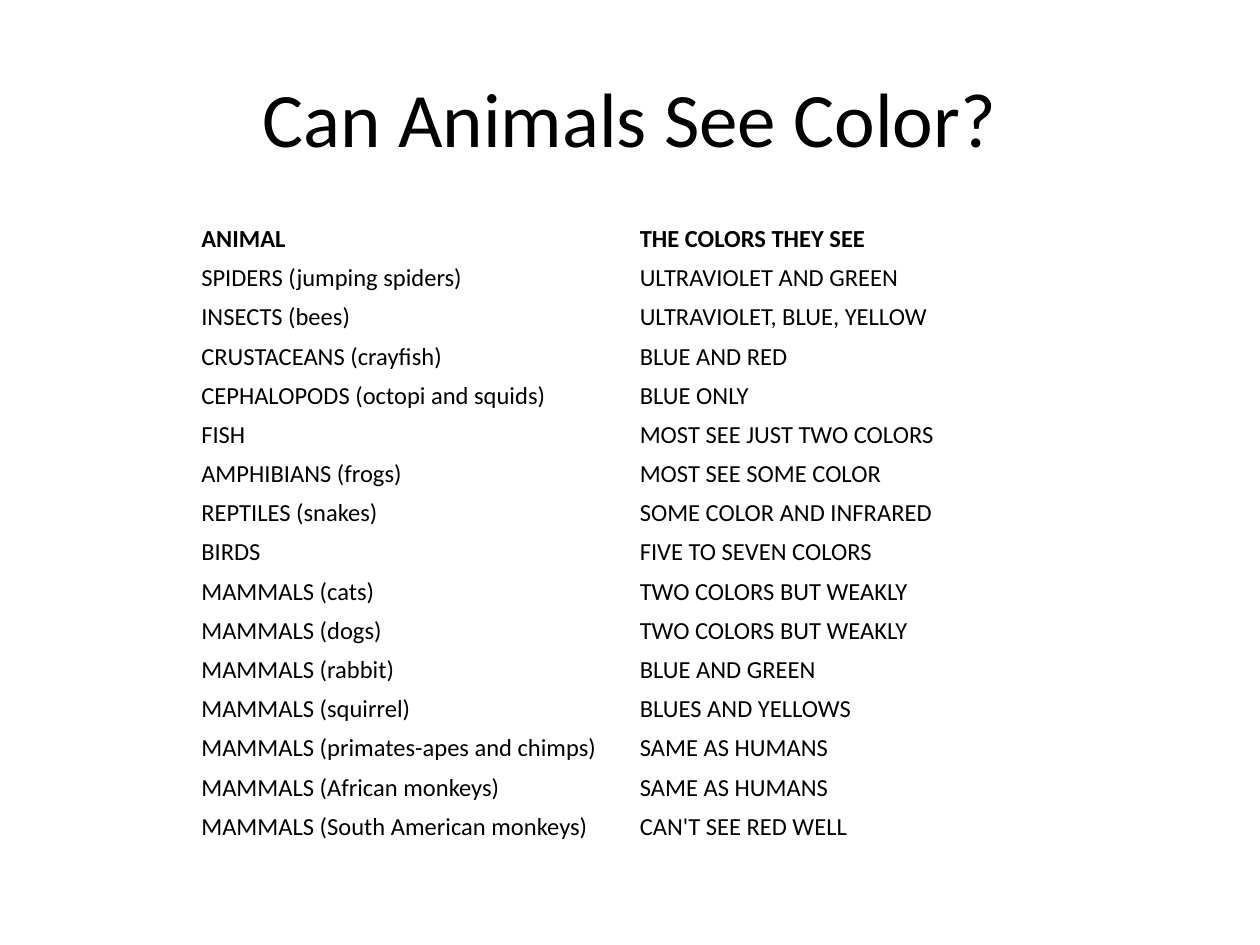
from pptx import Presentation
from pptx.dml.color import RGBColor
from pptx.enum.text import MSO_ANCHOR, PP_ALIGN
from pptx.util import Inches, Pt

MIDDLE = MSO_ANCHOR.MIDDLE
CENTER = PP_ALIGN.CENTER
BLACK = RGBColor(0x00, 0x00, 0x00)
FONT = "Calibri"

VISION_ROWS = [
    ("ANIMAL", "THE COLORS THEY SEE"),
    ("SPIDERS (jumping spiders)", "ULTRAVIOLET AND GREEN"),
    ("INSECTS (bees)", "ULTRAVIOLET, BLUE, YELLOW"),
    ("CRUSTACEANS (crayfish)", "BLUE AND RED"),
    ("CEPHALOPODS (octopi and squids)", "BLUE ONLY"),
    ("FISH", "MOST SEE JUST TWO COLORS"),
    ("AMPHIBIANS (frogs)", "MOST SEE SOME COLOR"),
    ("REPTILES (snakes)", "SOME COLOR AND INFRARED"),
    ("BIRDS", "FIVE TO SEVEN COLORS"),
    ("MAMMALS (cats)", "TWO COLORS BUT WEAKLY"),
    ("MAMMALS (dogs)", "TWO COLORS BUT WEAKLY"),
    ("MAMMALS (rabbit)", "BLUE AND GREEN"),
    ("MAMMALS (squirrel)", "BLUES AND YELLOWS"),
    ("MAMMALS (primates-apes and chimps)", "SAME AS HUMANS"),
    ("MAMMALS (African monkeys)", "SAME AS HUMANS"),
    ("MAMMALS (South American monkeys)", "CAN'T SEE RED WELL"),
]


def add_text(paragraph, text, size, bold=False):
    """Add one black run to a paragraph."""
    run = paragraph.add_run()
    run.text = text
    run.font.name = FONT
    run.font.size = Pt(size)
    run.font.bold = bold
    run.font.color.rgb = BLACK


def add_title(slide, left, top, width, height):
    """Place the centred question in the given box."""
    title = slide.shapes.add_textbox(left, top, width, height).text_frame
    title.word_wrap = True
    title.vertical_anchor = MIDDLE
    title.paragraphs[0].alignment = CENTER
    add_text(title.paragraphs[0], "Can Animals See Color?", 44)


def add_vision_table(slide, left, top, width, height):
    """Fill the given box with the unruled table of animals and colors."""
    table = slide.shapes.add_table(
        len(VISION_ROWS), len(VISION_ROWS[0]), left, top, width, height
    ).table
    table.first_row = False
    table.horz_banding = False
    inset = height // len(VISION_ROWS) // 8
    for row, entries in enumerate(VISION_ROWS):
        for column, entry in enumerate(entries):
            cell = table.cell(row, column)
            cell.fill.background()
            cell.vertical_anchor = MIDDLE
            cell.margin_left = cell.margin_right = 2 * inset
            cell.margin_top = cell.margin_bottom = inset
            add_text(cell.text_frame.paragraphs[0], entry, 14, bold=row == 0)


def main():
    """Build and save the slide."""
    presentation = Presentation()
    presentation.slide_width = Inches(10)
    presentation.slide_height = Inches(7.5)
    slide = presentation.slides.add_slide(presentation.slide_layouts[6])
    add_title(slide, Inches(0.5), Inches(0.3), Inches(9), Inches(1.25))
    add_vision_table(slide, Inches(1.52), Inches(1.74), Inches(6.96), Inches(4.97))
    presentation.save("out.pptx")


if __name__ == "__main__":
    main()
